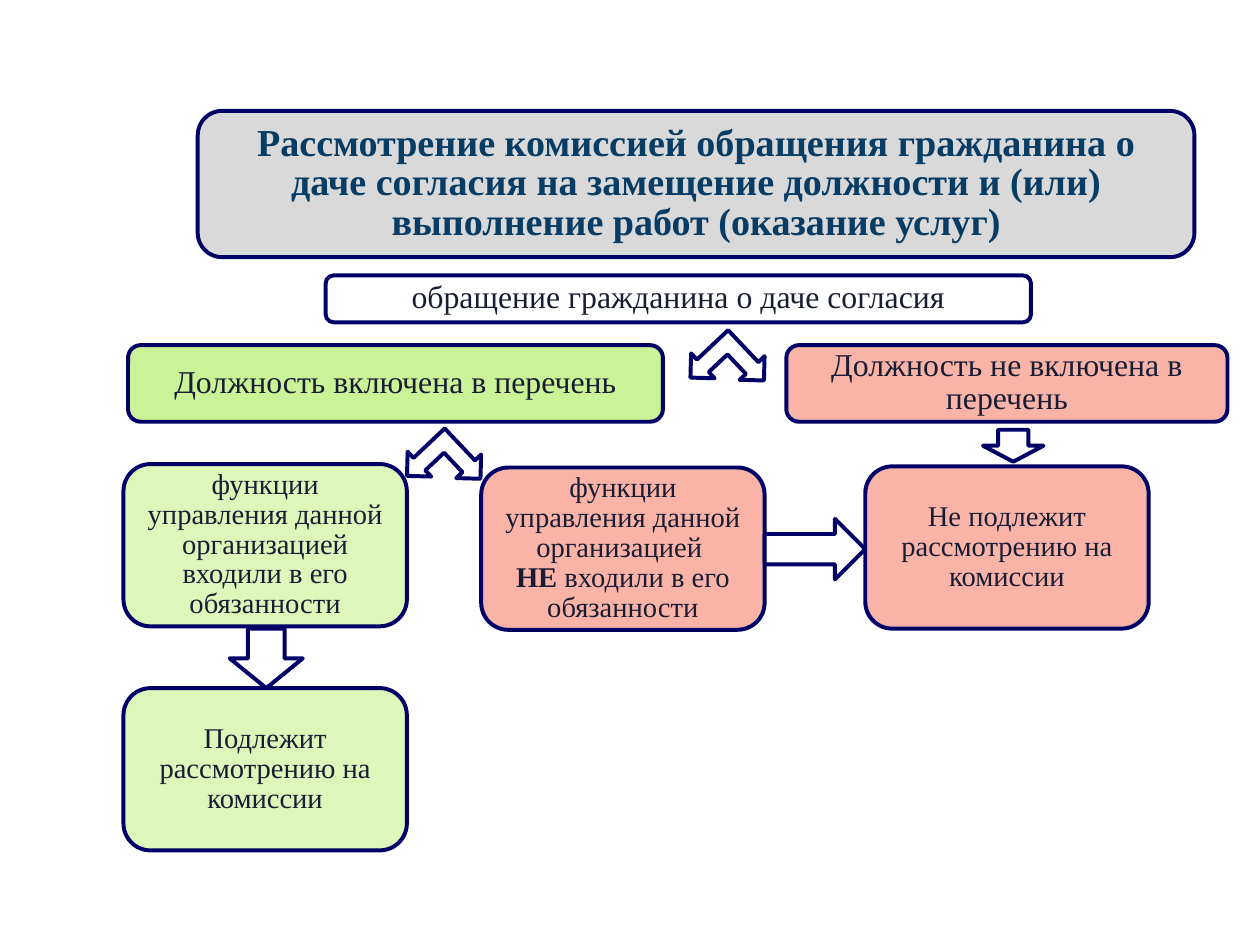
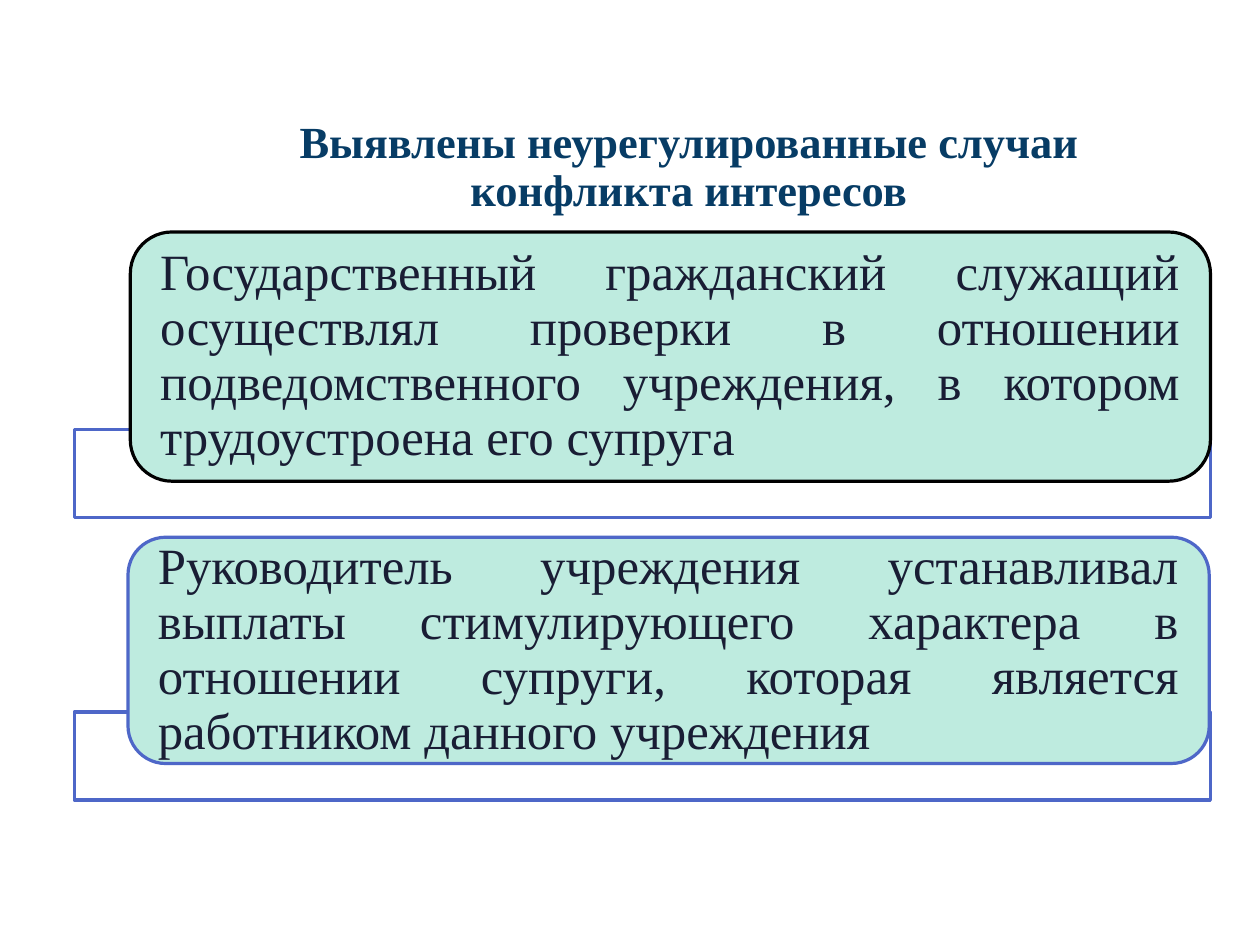
import pptx
import pptx.util
import pptx.dml.color
import pptx.enum.shapes
import pptx.enum.text

Inches = pptx.util.Inches
RGBColor = pptx.dml.color.RGBColor
SHAPE = pptx.enum.shapes.MSO_SHAPE
ALIGN = pptx.enum.text.PP_ALIGN

FONT = "Times New Roman"
NAVY = RGBColor(0x00, 0x00, 0x66)
TITLE_BLUE = RGBColor(0x07, 0x3C, 0x65)
INK = RGBColor(0x19, 0x1D, 0x34)
WHITE = RGBColor(0xFF, 0xFF, 0xFF)
BLACK = RGBColor(0x00, 0x00, 0x00)
GRAY = RGBColor(0xD9, 0xD9, 0xD9)
GREEN = RGBColor(0xCA, 0xF2, 0x97)
PALE_GREEN = RGBColor(0xDC, 0xF7, 0xBA)
CORAL = RGBColor(0xF9, 0xB3, 0xA7)
MINT = RGBColor(0xBE, 0xEB, 0xDF)
BLUE = RGBColor(0x4E, 0x67, 0xC8)

TITLE_ONLY = 5
CORNER_INSET = 0.29 / 6
OUTCOME_SIZE = (2.48, 1.42)


def write_text(frame, spans, size=18, color=INK, bold=False, align=ALIGN.CENTER,
               spacing=0.87, margins=(0.1, 0.05)):
    frame.word_wrap = True
    frame.auto_size = pptx.enum.text.MSO_AUTO_SIZE.NONE
    frame.vertical_anchor = pptx.enum.text.MSO_ANCHOR.MIDDLE
    frame.margin_left = frame.margin_right = Inches(margins[0])
    frame.margin_top = frame.margin_bottom = Inches(margins[1])
    para = frame.paragraphs[0]
    para.alignment = align
    para.line_spacing = spacing
    if isinstance(spans, str):
        spans = [(spans, bold)]
    for text, span_bold in spans:
        if text == "\n":
            para.add_line_break()
            continue
        span = para.add_run()
        span.text = text
        span.font.name = FONT
        span.font.size = pptx.util.Pt(size)
        span.font.bold = span_bold
        span.font.color.rgb = color


def add_figure(page, kind, box, fill=WHITE, line=NAVY, width=2.5, rotation=0):
    figure = page.shapes.add_shape(kind, *map(Inches, box))
    figure.shadow.inherit = False
    figure.fill.solid()
    figure.fill.fore_color.rgb = fill
    figure.line.color.rgb = line
    figure.line.width = pptx.util.Pt(width)
    figure.rotation = rotation
    return figure


def place_title(page, box, text, **text_format):
    title = page.shapes.title
    title.left, title.top, title.width, title.height = map(Inches, box)
    write_text(title.text_frame, text, color=TITLE_BLUE, bold=True, **text_format)
    page.shapes._spTree.append(title._element)


def draw_decision_tree(page, left, top):
    nodes = [
        ((1.77, 0, 6.17, 0.41), WHITE, 20, "обращение гражданина о даче согласия"),
        ((0.04, 0.61, 4.68, 0.67), GREEN, 20, "Должность включена в перечень"),
        ((5.8, 0.61, 3.86, 0.67), CORAL, 20, "Должность не включена в перечень"),
        ((0, 1.65, *OUTCOME_SIZE), PALE_GREEN, 18,
         "функции управления данной организацией входили в его обязанности"),
        ((3.13, 1.68, *OUTCOME_SIZE), CORAL, 18,
         [("функции управления данной организацией ", False), ("\n", False),
          ("НЕ", True), (" входили в его обязанности", False)]),
        ((6.49, 1.67, *OUTCOME_SIZE), CORAL, 18, "Не подлежит рассмотрению на комиссии"),
        ((0, 3.61, *OUTCOME_SIZE), PALE_GREEN, 18, "Подлежит рассмотрению на комиссии"),
    ]
    arrows = [
        (SHAPE.LEFT_UP_ARROW, (4.98, 0.5, 0.61, 0.6), 226.6),
        (SHAPE.LEFT_UP_ARROW, (2.5, 1.36, 0.61, 0.6), 226.6),
        (SHAPE.DOWN_ARROW, (7.52, 1.35, 0.53, 0.28), 0),
        (SHAPE.RIGHT_ARROW, (5.61, 2.13, 0.88, 0.53), 0),
        (SHAPE.DOWN_ARROW, (0.93, 3.09, 0.64, 0.52), 0),
    ]
    for (x, y, width, height), fill, size, text in nodes:
        node = add_figure(page, SHAPE.ROUNDED_RECTANGLE,
                          (left + x, top + y, width, height), fill)
        write_text(node.text_frame, text, size=size)
    for kind, (x, y, width, height), rotation in arrows:
        add_figure(page, kind, (left + x, top + y, width, height), rotation=rotation)


def draw_case(page, box, text, line):
    left, top, width, height = box
    add_figure(page, SHAPE.RECTANGLE, (0.65, top + height - 0.45, 9.94, 0.77),
               line=BLUE, width=2)
    card = add_figure(page, SHAPE.ROUNDED_RECTANGLE, box, MINT, line, 2)
    write_text(card.text_frame, text, size=32, align=ALIGN.JUSTIFY, spacing=0.9,
               margins=(0.26 - CORNER_INSET * height, 0))


def build_review_page(deck):
    page = deck.slides.add_slide(deck.slide_layouts[TITLE_ONLY])
    title_box = (1.73, 0.97, 8.72, 1.28)
    add_figure(page, SHAPE.ROUNDED_RECTANGLE, title_box, GRAY)
    place_title(page, title_box,
                "Рассмотрение комиссией обращения гражданина о даче согласия на "
                "замещение должности и (или) выполнение работ (оказание услуг)",
                size=24, margins=(0.16, 0.05))
    draw_decision_tree(page, 1.08, 2.41)


def build_conflict_page(deck):
    page = deck.slides.add_slide(deck.slide_layouts[TITLE_ONLY])
    place_title(page, (2.01, 0.96, 8.03, 1.02),
                "Выявлены неурегулированные случаи конфликта интересов",
                size=28, spacing=0.9, margins=(0, 0))
    draw_case(page, (1.14, 2.03, 9.45, 2.18),
              "Государственный гражданский служащий осуществлял проверки в отношении "
              "подведомственного учреждения, в котором трудоустроена его супруга", BLACK)
    draw_case(page, (1.12, 4.7, 9.46, 1.98),
              "Руководитель учреждения устанавливал выплаты стимулирующего характера в "
              "отношении супруги, которая является работником данного учреждения", BLUE)


def main():
    deck = pptx.Presentation()
    deck.slide_width = pptx.util.Cm(28)
    deck.slide_height = pptx.util.Cm(21)
    build_review_page(deck)
    build_conflict_page(deck)
    deck.save("out.pptx")


if __name__ == "__main__":
    main()
